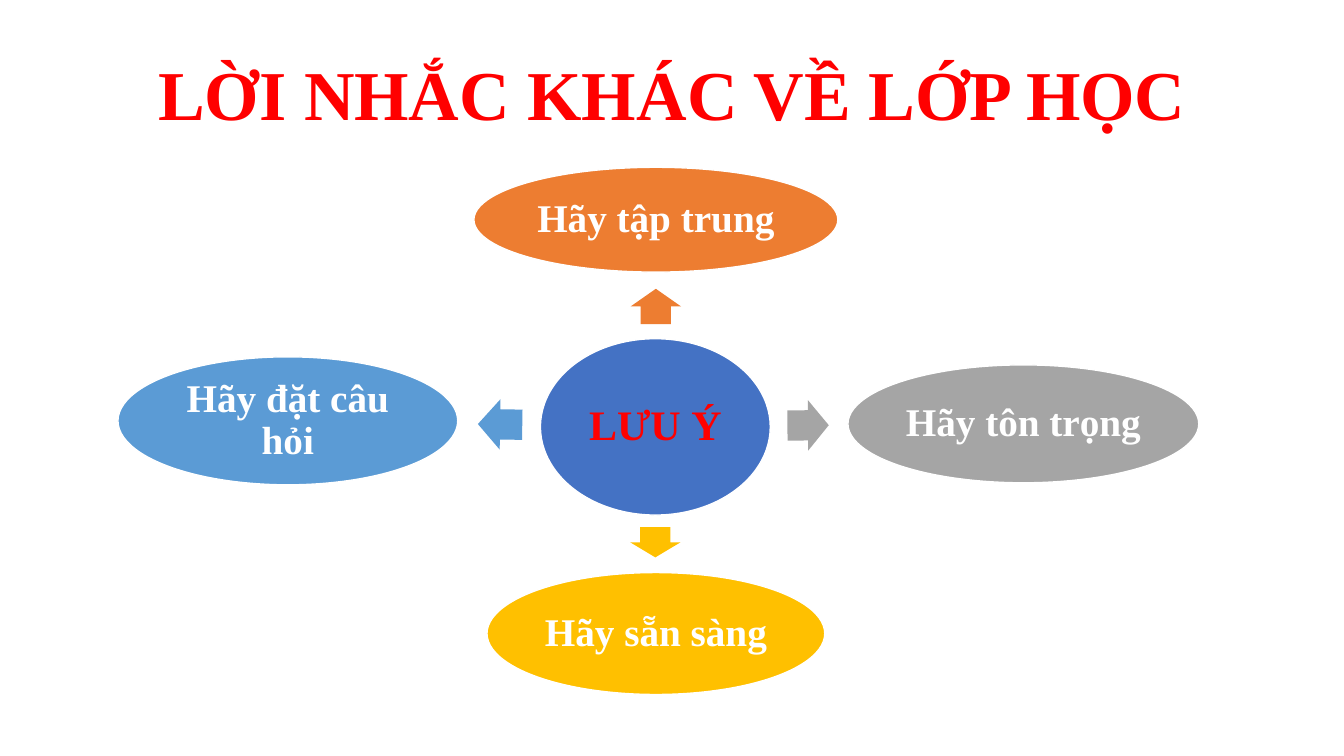
from dataclasses import dataclass

from pptx import Presentation
from pptx.dml.color import RGBColor as RGB
from pptx.enum.shapes import MSO_SHAPE as SHAPE
from pptx.enum.text import MSO_ANCHOR as ANCHOR, MSO_AUTO_SIZE as AUTO, PP_ALIGN as ALIGN
from pptx.util import Emu, Pt

EMU_PER_PX = 9144


@dataclass(frozen=True)
class Theme:
    """Colours, font and type sizes of the slide."""
    font: str = "Times New Roman"
    title_size: int = 50
    hub_size: int = 30
    node_size: int = 28
    red: str = "FF0000"
    white: str = "FFFFFF"
    hub: str = "4472C4"
    top: str = "ED7D31"
    right: str = "A5A5A5"
    bottom: str = "FFC000"
    left: str = "5B9BD5"


THEME = Theme()

REMINDERS = [
    ("Hãy tập trung", THEME.top, (470, 166, 361, 104), (633, 279, 35, 50), 270),
    ("Hãy tôn trọng", THEME.right, (841, 362, 348, 117), (781, 397, 41, 50), 359.6),
    ("Hãy sẵn sàng", THEME.bottom, (483, 568, 335, 121), (635, 513, 30, 50), 90),
    ("Hãy đặt câu hỏi", THEME.left, (117, 354, 337, 127), (474, 396, 44, 50), 180.9),
]


def px(n):
    """Turn px into EMU."""
    return Emu(n * EMU_PER_PX)


def write(tf, text, size, color):
    """Fill a text frame with one centred bold paragraph."""
    tf.word_wrap = True
    tf.auto_size = AUTO.NONE
    tf.vertical_anchor = ANCHOR.MIDDLE
    p = tf.paragraphs[0]
    p.text = text
    p.alignment = ALIGN.CENTER
    p.line_spacing = 0.9
    p.font.name = THEME.font
    p.font.size = Pt(size)
    p.font.bold = True
    p.font.color.rgb = RGB.from_string(color)


def add_title(s, text, box):
    """Place and format the title placeholder."""
    sp = s.shapes.title
    sp.left, sp.top, sp.width, sp.height = map(px, box)
    write(sp.text_frame, text, THEME.title_size, THEME.red)


def add_filled(s, kind, box, fill):
    """Add a preset shape with a plain fill and no shadow."""
    sp = s.shapes.add_shape(kind, *map(px, box))
    sp.shadow.inherit = False
    sp.fill.solid()
    sp.fill.fore_color.rgb = RGB.from_string(fill)
    return sp


def add_bubble(s, text, box, fill, size, color):
    """Add an ellipse with a thin white outline and a label."""
    sp = add_filled(s, SHAPE.OVAL, box, fill)
    sp.line.color.rgb = RGB.from_string(THEME.white)
    sp.line.width = Pt(1)
    tf = sp.text_frame
    tf.margin_left = tf.margin_right = tf.margin_top = tf.margin_bottom = px(4)
    write(tf, text, size, color)


def add_arrow(s, box, fill, angle):
    """Add a block arrow turned to the given angle."""
    sp = add_filled(s, SHAPE.RIGHT_ARROW, box, fill)
    sp.line.fill.background()
    sp.adjustments[0], sp.adjustments[1] = 0.6, 0.5
    sp.rotation = angle


def main():
    """Build the slide and save it."""
    prs = Presentation()
    prs.slide_width, prs.slide_height = px(1333), px(750)
    s = prs.slides.add_slide(prs.slide_layouts[5])
    add_title(s, "LỜI NHẮC KHÁC VỀ LỚP HỌC", (117, 47, 1100, 101))
    add_bubble(s, "LƯU Ý", (536, 336, 228, 175), THEME.hub, THEME.hub_size, THEME.red)
    for text, fill, bubble, arrow, angle in REMINDERS:
        add_arrow(s, arrow, fill, angle)
        add_bubble(s, text, bubble, fill, THEME.node_size, THEME.white)
    prs.save("out.pptx")


if __name__ == "__main__":
    main()
